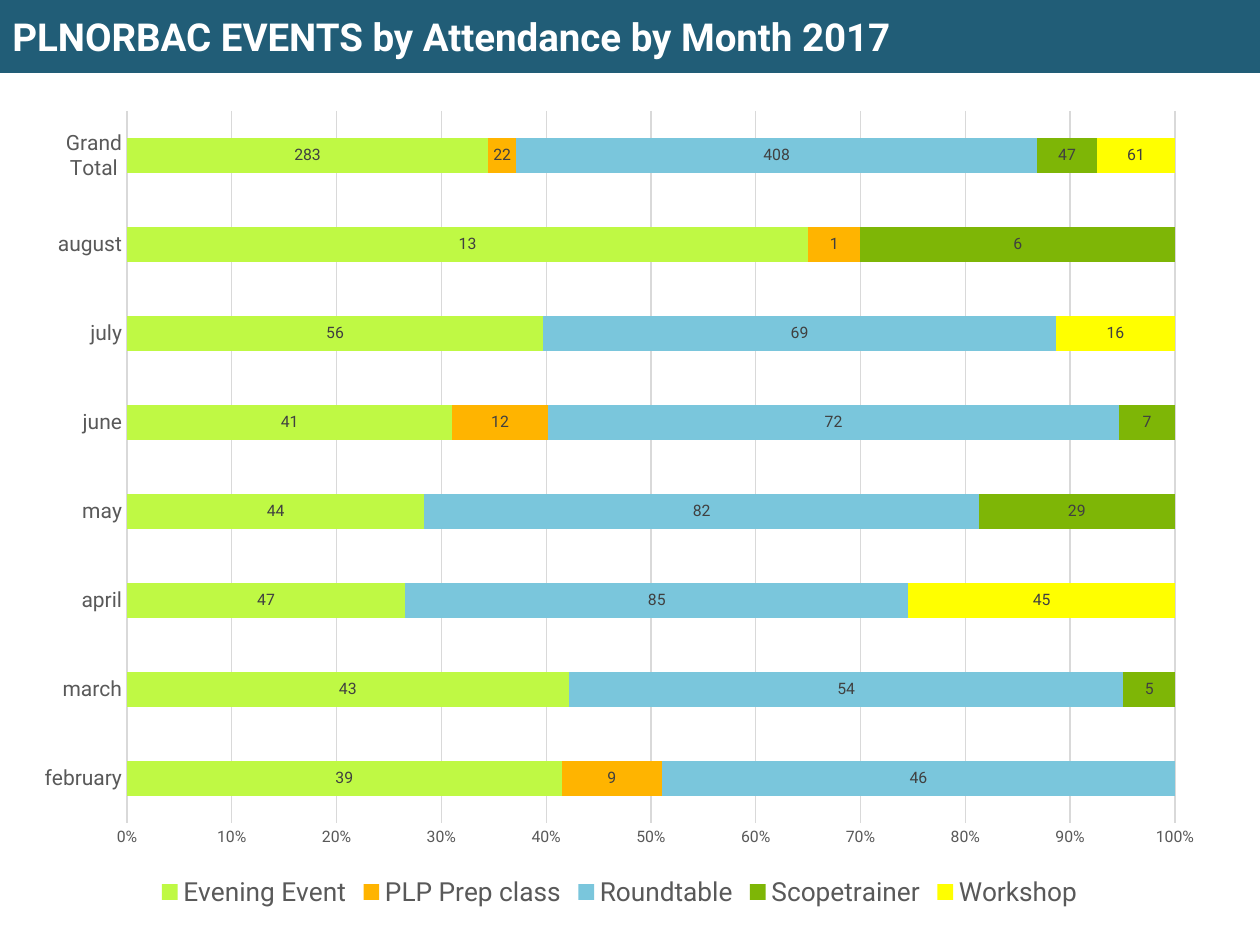
"""Build a slide with a stacked bar chart of event attendance by month."""
from dataclasses import dataclass
from typing import Optional

import lxml.etree
import pptx
import pptx.chart.axis
import pptx.chart.chart
import pptx.chart.data
import pptx.dml.color
import pptx.enum.chart
import pptx.enum.shapes
import pptx.enum.text
import pptx.oxml.ns
import pptx.slide
import pptx.util

PX_PER_INCH = 126


@dataclass(frozen=True)
class Theme:
    font: str = "Roboto"
    banner: str = "215D77"
    title: str = "FFFFFF"
    text: str = "595959"
    label: str = "404040"
    grid: str = "D9D9D9"
    title_size: int = 22
    legend_size: int = 15
    category_size: int = 12
    small_size: int = 9
    line_width: float = 0.75


@dataclass(frozen=True)
class Box:
    left: int
    top: int
    width: int
    height: int

    def emu(self) -> tuple[int, ...]:
        return tuple(px(length) for length in (self.left, self.top, self.width, self.height))


@dataclass(frozen=True)
class EventType:
    name: str
    color: str
    attendance: tuple[Optional[int], ...]


THEME = Theme()
SLIDE = Box(0, 0, 1260, 945)
BANNER = Box(0, 0, 1260, 73)
CHART = Box(21, 94, 1197, 819)
PLOT = Box(127, 111, 1048, 712)
TITLE = "PLNORBAC EVENTS by Attendance by Month 2017"
MONTHS = ("february", "march", "april", "may", "june", "july", "august", "Grand Total")
EVENT_TYPES = (
    EventType("Evening Event", "BFF944", (39, 43, 47, 44, 41, 56, 13, 283)),
    EventType("PLP Prep class", "FFB400", (9, None, None, None, 12, None, 1, 22)),
    EventType("Roundtable", "7AC6DC", (46, 54, 85, 82, 72, 69, None, 408)),
    EventType("Scopetrainer", "7EB606", (None, 5, None, 29, 7, None, 6, 47)),
    EventType("Workshop", "FFFF00", (None, None, 45, None, None, 16, None, 61)),
)


def px(length: int) -> int:
    return round(length * pptx.util.Inches(1) / PX_PER_INCH)


def rgb(color: str) -> pptx.dml.color.RGBColor:
    return pptx.dml.color.RGBColor.from_string(color)


def set_font(font, size: int, color: str, bold: bool = False) -> None:
    font.name = THEME.font
    font.size = pptx.util.Pt(size)
    font.bold = bold
    font.color.rgb = rgb(color)


def set_line(line, color: str) -> None:
    line.color.rgb = rgb(color)
    line.width = pptx.util.Pt(THEME.line_width)


def add_banner(slide: pptx.slide.Slide, box: Box, title: str) -> None:
    shape = slide.shapes.add_shape(pptx.enum.shapes.MSO_SHAPE.RECTANGLE, *box.emu())
    shape.shadow.inherit = False
    shape.fill.solid()
    shape.fill.fore_color.rgb = rgb(THEME.banner)
    shape.line.fill.background()
    shape.text_frame.vertical_anchor = pptx.enum.text.MSO_ANCHOR.MIDDLE
    paragraph = shape.text_frame.paragraphs[0]
    paragraph.text = title
    paragraph.alignment = pptx.enum.text.PP_ALIGN.LEFT
    set_font(paragraph.font, THEME.title_size, THEME.title, bold=True)


def place_plot(chart: pptx.chart.chart.Chart, frame: Box, plot: Box) -> None:
    plot_area = chart.plots[0]._element.getparent()
    for layout in plot_area.findall(pptx.oxml.ns.qn("c:layout")):
        plot_area.remove(layout)
    layout = lxml.etree.Element(pptx.oxml.ns.qn("c:layout"))
    manual = lxml.etree.SubElement(layout, pptx.oxml.ns.qn("c:manualLayout"))
    settings = {
        "layoutTarget": "inner",
        "xMode": "edge",
        "yMode": "edge",
        "x": (plot.left - frame.left) / frame.width,
        "y": (plot.top - frame.top) / frame.height,
        "w": plot.width / frame.width,
        "h": plot.height / frame.height,
    }
    for name, value in settings.items():
        lxml.etree.SubElement(manual, pptx.oxml.ns.qn(f"c:{name}"), val=str(value))
    plot_area.insert(0, layout)


def style_axis(axis: pptx.chart.axis._BaseAxis, size: int) -> None:
    axis.major_tick_mark = pptx.enum.chart.XL_TICK_MARK.NONE
    axis.minor_tick_mark = pptx.enum.chart.XL_TICK_MARK.NONE
    set_font(axis.tick_labels.font, size, THEME.text)


def style_series(series, color: str) -> None:
    series.format.fill.solid()
    series.format.fill.fore_color.rgb = rgb(color)
    series.invert_if_negative = False
    labels = series.data_labels
    labels.show_value = True
    labels.position = pptx.enum.chart.XL_LABEL_POSITION.CENTER
    set_font(labels.font, THEME.small_size, THEME.label)


def add_attendance_chart(slide: pptx.slide.Slide, box: Box, plot_box: Box) -> None:
    data = pptx.chart.data.CategoryChartData()
    data.categories = MONTHS
    for event in EVENT_TYPES:
        data.add_series(event.name, event.attendance)
    chart_type = pptx.enum.chart.XL_CHART_TYPE.BAR_STACKED_100
    chart = slide.shapes.add_chart(chart_type, *box.emu(), data).chart
    chart.has_title = False
    set_font(chart.font, 10, "000000")
    chart.has_legend = True
    chart.legend.position = pptx.enum.chart.XL_LEGEND_POSITION.BOTTOM
    chart.legend.include_in_layout = False
    set_font(chart.legend.font, THEME.legend_size, THEME.text)

    style_axis(chart.category_axis, THEME.category_size)
    set_line(chart.category_axis.format.line, THEME.grid)
    value_axis = chart.value_axis
    style_axis(value_axis, THEME.small_size)
    value_axis.format.line.fill.background()
    value_axis.has_major_gridlines = True
    set_line(value_axis.major_gridlines.format.line, THEME.grid)
    value_axis.minimum_scale, value_axis.maximum_scale = 0, 1
    value_axis.major_unit = 0.1
    value_axis.tick_labels.number_format = "0%"
    value_axis.tick_labels.number_format_is_linked = False

    plot = chart.plots[0]
    plot.gap_width = 150
    plot.overlap = 100
    plot.vary_by_categories = False
    for series, event in zip(plot.series, EVENT_TYPES):
        style_series(series, event.color)
    place_plot(chart, box, plot_box)


def main() -> None:
    presentation = pptx.Presentation()
    presentation.slide_width = px(SLIDE.width)
    presentation.slide_height = px(SLIDE.height)
    slide = presentation.slides.add_slide(presentation.slide_layouts[6])
    add_banner(slide, BANNER, TITLE)
    add_attendance_chart(slide, CHART, PLOT)
    presentation.save("out.pptx")


if __name__ == "__main__":
    main()
